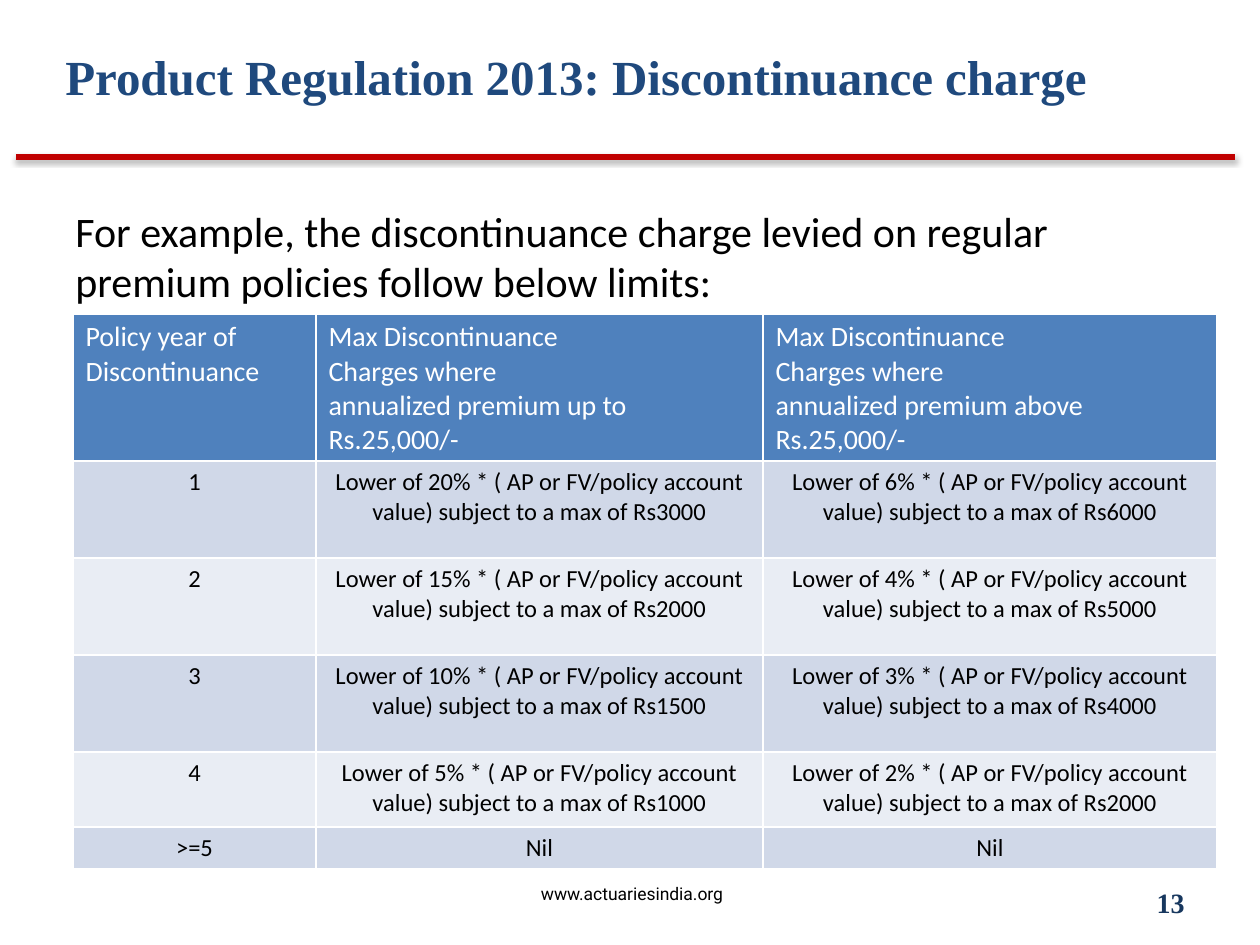
from lxml import etree
from pptx import Presentation
from pptx.dml.color import RGBColor
from pptx.enum.shapes import MSO_CONNECTOR
from pptx.enum.text import MSO_ANCHOR, PP_ALIGN
from pptx.oxml import parse_xml
from pptx.util import Emu, Pt

LEFT, CENTER, RIGHT = PP_ALIGN.LEFT, PP_ALIGN.CENTER, PP_ALIGN.RIGHT
TOP, MIDDLE = MSO_ANCHOR.TOP, MSO_ANCHOR.MIDDLE
STRAIGHT = MSO_CONNECTOR.STRAIGHT
SCALE = 914400 / 126
A = "http://schemas.openxmlformats.org/drawingml/2006/main"


def px(*lengths):
    return [Emu(round(n * SCALE)) for n in lengths]


def write(frame, text, size, color, font="Calibri", bold=False, align=LEFT, anchor=TOP):
    frame.word_wrap = True
    frame.vertical_anchor = anchor
    for i, line in enumerate(text.split("\n")):
        paragraph = frame.paragraphs[0] if i == 0 else frame.add_paragraph()
        paragraph.alignment = align
        run = paragraph.add_run()
        run.text = line
        run.font.name, run.font.size, run.font.bold = font, Pt(size), bold
        run.font.color.rgb = RGBColor.from_string(color)


prs = Presentation()
prs.slide_width, prs.slide_height = px(1260, 945)
slide = prs.slides.add_slide(prs.slide_layouts[6])

# Red rule under the title, with a soft shadow
rule = slide.shapes.add_connector(STRAIGHT, *px(16, 157, 1235, 157))
rule.line.color.rgb = RGBColor.from_string("C00000")
rule.line.width = Pt(3)
rule.element.spPr.append(parse_xml(
    f'<a:effectLst xmlns:a="{A}">'
    '<a:outerShdw blurRad="39370" dist="20320" dir="5400000" rotWithShape="0">'
    '<a:srgbClr val="000000"><a:alpha val="38000"/></a:srgbClr>'
    '</a:outerShdw></a:effectLst>'))

# Title, introduction, web address and page number
texts = [
    ((53, -3, 1134, 158), "Product Regulation 2013: Discontinuance charge",
     dict(size=28, color="1F497D", font="Times New Roman", bold=True, anchor=MIDDLE)),
    ((63, 199, 1124, 115),
     "For example, the discontinuance charge levied on regular premium policies "
     "follow below limits:",
     dict(size=24, color="000000")),
    ((2, 869, 1260, 50), "www.actuariesindia.org",
     dict(size=10, color="000000", font="Roboto", align=CENTER, anchor=MIDDLE)),
    ((903, 877, 294, 50), "13",
     dict(size=16, color="17375E", font="Times New Roman", bold=True,
          align=RIGHT, anchor=MIDDLE)),
]
for box, text, style in texts:
    write(slide.shapes.add_textbox(*px(*box)).text_frame, text, **style)

# Table of charge limits
heading = "Max Discontinuance\nCharges where\nannualized premium {}\nRs.25,000/-"
limit = "Lower of {}% * ( AP or FV/policy account value) subject to a max of Rs{}"
limits = [(20, 3000, 6, 6000), (15, 2000, 4, 5000), (10, 1500, 3, 4000), (5, 1000, 2, 2000)]
rows = [("Policy year of Discontinuance", heading.format("up to"), heading.format("above"))]
for year, (low_rate, low_max, high_rate, high_max) in enumerate(limits, 1):
    rows.append((str(year), limit.format(low_rate, low_max), limit.format(high_rate, high_max)))
rows.append((">=5", "Nil", "Nil"))

col_widths = [243, 447, 454]
row_heights = [146, 97, 97, 97, 75, 41]
charges = slide.shapes.add_table(
    len(rows), len(col_widths),
    *px(73, 314, sum(col_widths), sum(row_heights))).table
for column, width in zip(charges.columns, px(*col_widths)):
    column.width = width
for row, height in zip(charges.rows, px(*row_heights)):
    row.height = height

for r, values in enumerate(rows):
    for c, value in enumerate(values):
        cell = charges.cell(r, c)
        if r == 0:
            fill, style = "4F81BD", dict(size=16, color="FFFFFF")
        else:
            fill = "D0D8E8" if r % 2 else "E9EDF4"
            style = dict(size=14, color="000000", align=CENTER)
        write(cell.text_frame, value, **style)
        # Borders come before the fill in the cell properties
        properties = cell._tc.get_or_add_tcPr()
        for side in ("lnL", "lnR", "lnT", "lnB"):
            border = etree.SubElement(properties, f"{{{A}}}{side}", w="12700")
            solid = etree.SubElement(border, f"{{{A}}}solidFill")
            etree.SubElement(solid, f"{{{A}}}srgbClr", val="FFFFFF")
        cell.fill.solid()
        cell.fill.fore_color.rgb = RGBColor.from_string(fill)

prs.save("out.pptx")
